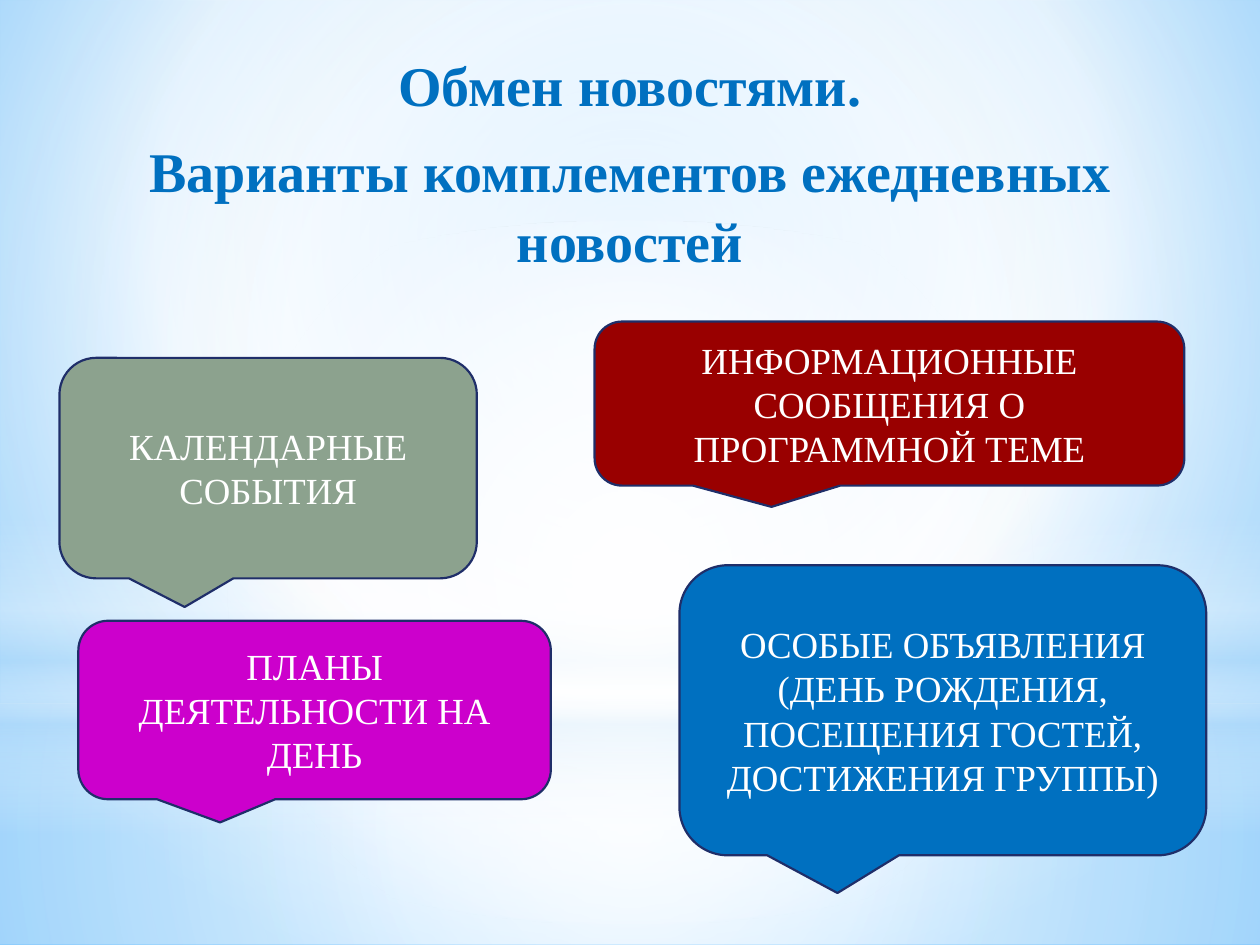
from lxml import etree
from pptx import Presentation
from pptx.dml.color import RGBColor
from pptx.enum.shapes import MSO_SHAPE
from pptx.enum.text import MSO_ANCHOR, MSO_AUTO_SIZE, PP_ALIGN
from pptx.oxml import parse_xml
from pptx.oxml.ns import nsdecls, qn
from pptx.util import Pt

RECTANGLE = MSO_SHAPE.RECTANGLE
OVAL = MSO_SHAPE.OVAL
CALLOUT = MSO_SHAPE.ROUNDED_RECTANGULAR_CALLOUT
MIDDLE = MSO_ANCHOR.MIDDLE
BOTTOM = MSO_ANCHOR.BOTTOM
NO_AUTOFIT = MSO_AUTO_SIZE.NONE
CENTER = PP_ALIGN.CENTER

FONT = "Times New Roman"
WHITE, PALE, BLUE, NAVY = "FFFFFF", "B4DCFA", "0070C0", "1F2E69"
SECTION_HEADER = 2
MIDPOINT = (50, 50, 50, 50)

GLOWS = [
    (RECTANGLE, (0, 402, 720, 138), [(0, WHITE, 91), (37, WHITE, 76), (100, PALE, 79)], MIDPOINT),
    (RECTANGLE, (0, 0, 720, 402), [(0, WHITE, 89), (48, WHITE, 62), (100, PALE, 79)], MIDPOINT),
    (RECTANGLE, (0, 296.5, 720, 180),
     [(0, WHITE, 0), (29, WHITE, 30), (45, PALE, 40), (55, WHITE, 26), (65, PALE, 60), (100, WHITE, 0)],
     None),
    (OVAL, (0, 126, 720, 402), [(0, WHITE, 100), (56, WHITE, 0)], MIDPOINT),
]
CALLOUTS = [
    ("КАЛЕНДАРНЫЕ СОБЫТИЯ", (34, 204.5, 238.5, 126), "8CA28E"),
    ("ИНФОРМАЦИОННЫЕ СООБЩЕНИЯ О ПРОГРАММНОЙ ТЕМЕ", (339.75, 183.75, 337, 93.75), "990000"),
    ("ПЛАНЫ ДЕЯТЕЛЬНОСТИ НА ДЕНЬ", (44.75, 354.75, 270, 102), "CC00CC"),
    ("ОСОБЫЕ ОБЪЯВЛЕНИЯ (ДЕНЬ РОЖДЕНИЯ, ПОСЕЩЕНИЯ ГОСТЕЙ, ДОСТИЖЕНИЯ ГРУППЫ)",
     (388.25, 323, 301, 165.75), BLUE),
]
HEADING = ["Обмен новостями.", "Варианты комплементов ежедневных новостей"]


def color(value):
    """Return the colour for a hex string."""
    return RGBColor.from_string(value)


def set_gradient(fill, holder, stops, focus=None):
    """Fill the holder with stops around a focus, or from top to bottom."""
    fill.gradient()
    gradient = parse_xml(f'<a:gradFill {nsdecls("a")} rotWithShape="1"><a:gsLst/></a:gradFill>')
    for position, value, opacity in stops:
        stop = etree.SubElement(gradient[0], qn("a:gs"), pos=str(position * 1000))
        tint = etree.SubElement(stop, qn("a:srgbClr"), val=value)
        if opacity < 100:
            etree.SubElement(tint, qn("a:alpha"), val=str(opacity * 1000))
    if focus:
        circle = etree.SubElement(gradient, qn("a:path"), path="circle")
        edges = {side: str(share * 1000) for side, share in zip("ltrb", focus)}
        etree.SubElement(circle, qn("a:fillToRect"), edges)
    else:
        etree.SubElement(gradient, qn("a:lin"), ang="5400000", scaled="0")
    holder.replace(holder.find(qn("a:gradFill")), gradient)


def write_text(frame, lines, size, ink, bold=False, anchor=MIDDLE, before=0, after=0, spacing=None):
    """Write centred paragraphs into a text frame."""
    frame.word_wrap = True
    frame.auto_size = NO_AUTOFIT
    frame.vertical_anchor = anchor
    for number, line in enumerate(lines):
        para = frame.add_paragraph() if number else frame.paragraphs[0]
        para.alignment = CENTER
        para.space_before, para.space_after = Pt(before), Pt(after)
        para.line_spacing = spacing
        span = para.add_run()
        span.text = line
        span.font.name, span.font.size, span.font.bold = FONT, Pt(size), bold
        span.font.color.rgb = color(ink)


def add_box(page, kind, place):
    """Add a preset shape without a shadow."""
    box = page.shapes.add_shape(kind, *map(Pt, place))
    box.shadow.inherit = False
    return box


def add_glow(page, kind, place, stops, focus):
    """Add a translucent backdrop layer."""
    box = add_box(page, kind, place)
    box.line.fill.background()
    set_gradient(box.fill, box.element.spPr, stops, focus)


def add_callout(page, text, place, fill):
    """Add a speech bubble with its text."""
    box = add_box(page, CALLOUT, place)
    box.adjustments[0], box.adjustments[1] = -0.2, 0.63
    box.fill.solid()
    box.fill.fore_color.rgb = color(fill)
    box.line.color.rgb = color(NAVY)
    box.line.width = Pt(1.25)
    write_text(box.text_frame, [text], size=21, ink=WHITE)


def add_heading(page):
    """Place the heading in the body placeholder, in front of the backdrop."""
    title, body = page.placeholders
    tree = page.shapes.element
    tree.remove(title.element)
    tree.append(body.element)
    body.left, body.top, body.width, body.height = map(Pt, (14, 57.5, 692, 102.5))
    write_text(body.text_frame, HEADING, size=32, ink=BLUE, bold=True,
               anchor=BOTTOM, before=6.4, after=3, spacing=1.04)


def main():
    """Build the slide and save it."""
    deck = Presentation()
    deck.slide_width, deck.slide_height = Pt(720), Pt(540)
    page = deck.slides.add_slide(deck.slide_layouts[SECTION_HEADER])
    backdrop = page.background.fill
    set_gradient(backdrop, page.element.find(f".//{qn('p:bgPr')}"),
                 [(0, "9ED5FF", 100), (60, WHITE, 100), (100, "5BB9FF", 100)], (20, 10, 20, 60))
    for glow in GLOWS:
        add_glow(page, *glow)
    for callout in CALLOUTS:
        add_callout(page, *callout)
    add_heading(page)
    deck.save("out.pptx")


if __name__ == "__main__":
    main()
